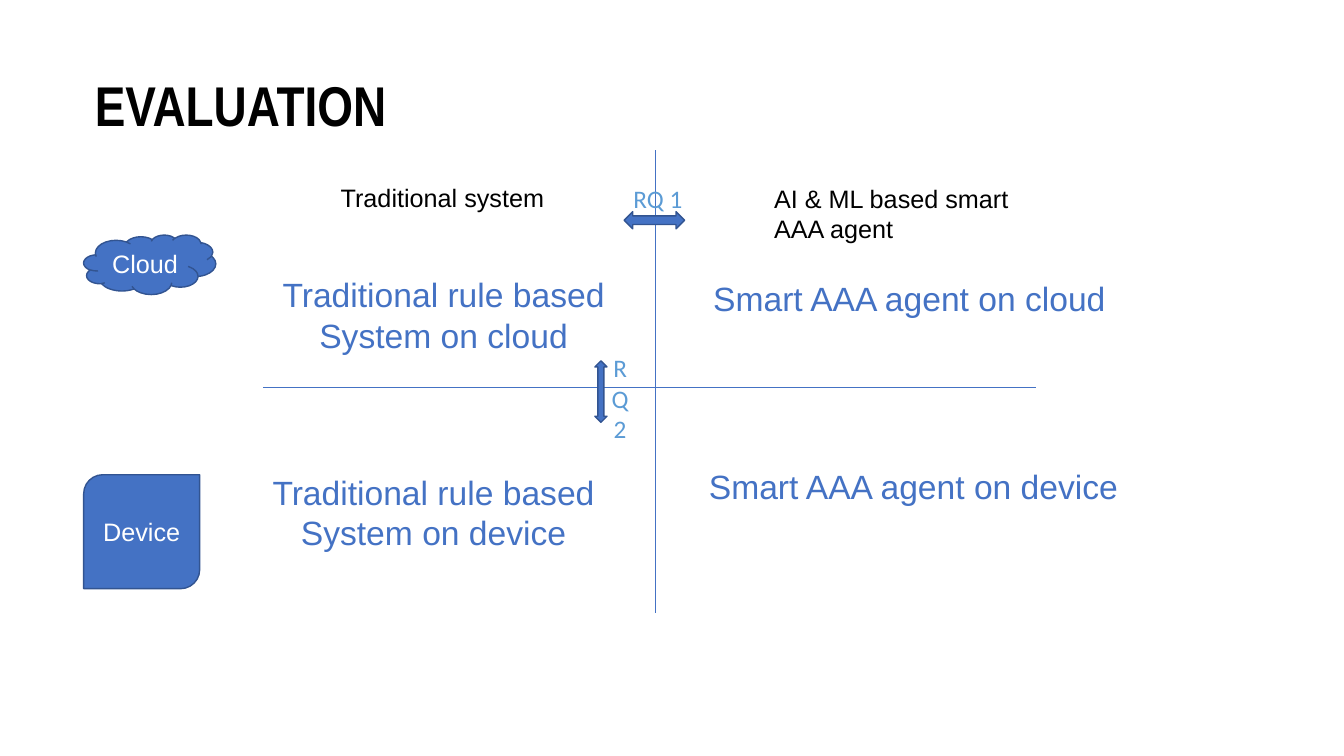
from lxml.etree import SubElement
from pptx import Presentation
from pptx.dml.color import RGBColor
from pptx.enum.shapes import MSO_CONNECTOR, MSO_SHAPE
from pptx.enum.text import MSO_ANCHOR, MSO_AUTO_SIZE, PP_ALIGN
from pptx.oxml.ns import qn
from pptx.util import Inches, Pt

BLUE, OUTLINE, SKY = "4472C4", "325491", "5B9BD5"

presentation = Presentation()
presentation.slide_width = Inches(13.33)
presentation.slide_height = Inches(7.5)
slide = presentation.slides.add_slide(presentation.slide_layouts[5])


def share(*percents):
    sides = (presentation.slide_width, presentation.slide_height) * 2
    return [int(side * percent / 100) for side, percent in zip(sides, percents)]


def write(shape, text, size, color, align, name="Arial", anchor=MSO_ANCHOR.TOP, wrap=True, bold=False):
    frame = shape.text_frame
    frame.text = text
    frame_format = {"word_wrap": wrap, "vertical_anchor": anchor, "auto_size": MSO_AUTO_SIZE.NONE}
    for attribute, value in frame_format.items():
        setattr(frame, attribute, value)
    for paragraph in frame.paragraphs:
        paragraph.alignment = align
        for attribute, value in {"size": Pt(size), "name": name, "bold": bold}.items():
            setattr(paragraph.font, attribute, value)
        paragraph.font.color.rgb = RGBColor.from_string(color)


title = slide.shapes.title
title_place = zip(("left", "top", "width", "height"), share(6.3, 9.6, 78.1, 16.67))
for attribute, value in title_place:
    setattr(title, attribute, value)
write(title, "EVALUATION", 40, "000000", PP_ALIGN.LEFT, "Arial Narrow", bold=True)
title.text_frame.paragraphs[0].line_spacing = 0.9

axes = [(48.76, 19.87, 48.76, 81.07), (19.58, 51.2, 77.12, 51.2)]
for ends in axes:
    axis = slide.shapes.add_connector(MSO_CONNECTOR.STRAIGHT, *share(*ends))
    axis.line.color.rgb = RGBColor.from_string(BLUE)
    axis.line.width = Pt(0.5)
    SubElement(axis.element.spPr, qn("a:effectLst"))

labels = [
    ("Traditional system", (24.61, 23.47, 17.78, 5.33), 18, "000000", PP_ALIGN.LEFT, "Arial", True),
    ("AI & ML based smart AAA agent", (56.86, 23.6, 21.01, 9.47), 18, "000000", PP_ALIGN.LEFT, "Arial", True),
    ("Smart AAA agent on cloud", (50.71, 36.13, 33.91, 6.67), 24, BLUE, PP_ALIGN.CENTER, "Arial", True),
    ("Smart AAA agent on device", (51.01, 60.93, 33.91, 6.67), 24, BLUE, PP_ALIGN.CENTER, "Arial", True),
    ("Traditional rule based\nSystem on cloud", (16.05, 35.6, 33.91, 12.13), 24, BLUE, PP_ALIGN.CENTER, "Arial", True),
    ("Traditional rule based\nSystem on device", (15.3, 61.73, 33.91, 12.13), 24, BLUE, PP_ALIGN.CENTER, "Arial", True),
    ("RQ 1", (46.36, 23.6, 5.18, 5.33), 18, SKY, PP_ALIGN.CENTER, "Calibri", False),
    ("RQ2", (44.71, 46, 2.85, 13.47), 18, SKY, PP_ALIGN.CENTER, "Calibri", True),
]
for text, place, size, color, align, name, wrap in labels:
    label = slide.shapes.add_textbox(*share(*place))
    write(label, text, size, color, align, name, wrap=wrap)

symbols = [
    (MSO_SHAPE.CLOUD, (6.23, 31.07, 9.83, 7.87), "Cloud"),
    (MSO_SHAPE.ROUND_2_DIAG_RECTANGLE, (6.23, 62.8, 8.63, 15.07), "Device"),
    (MSO_SHAPE.LEFT_RIGHT_ARROW, (46.44, 28, 4.5, 2.27), ""),
    (MSO_SHAPE.UP_DOWN_ARROW, (44.26, 47.73, 0.9, 8.13), ""),
]
for kind, place, text in symbols:
    symbol = slide.shapes.add_shape(kind, *share(*place))
    symbol.shadow.inherit = False
    symbol.fill.solid()
    symbol.fill.fore_color.rgb = RGBColor.from_string(BLUE)
    symbol.line.color.rgb = RGBColor.from_string(OUTLINE)
    symbol.line.width = Pt(1)
    if text:
        write(symbol, text, 18, "FFFFFF", PP_ALIGN.CENTER, anchor=MSO_ANCHOR.MIDDLE)

presentation.save("out.pptx")
